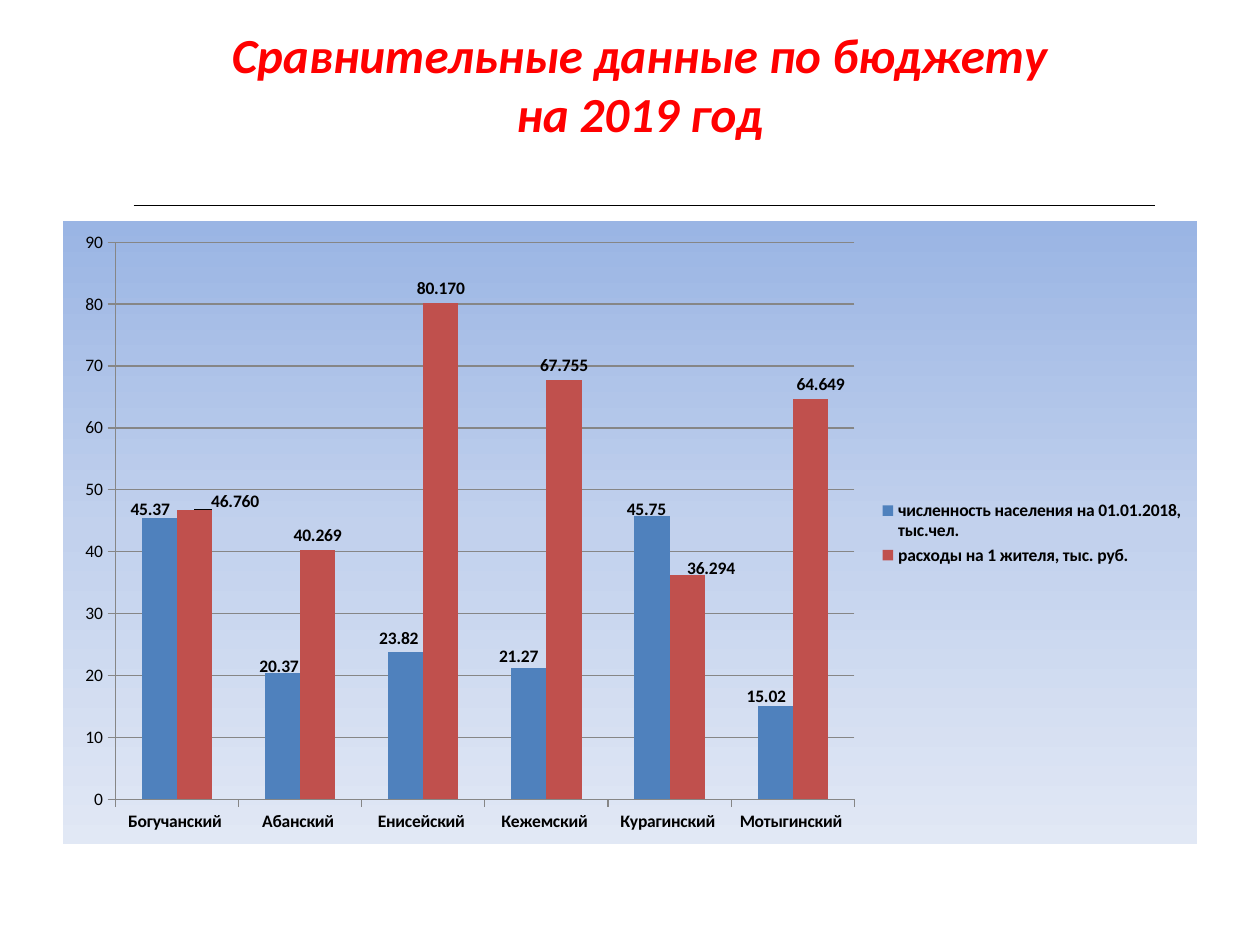
from dataclasses import dataclass

from lxml.etree import SubElement
from pptx import Presentation
from pptx.chart.data import CategoryChartData
from pptx.dml.color import RGBColor
from pptx.enum.chart import XL_CHART_TYPE, XL_LABEL_POSITION, XL_LEGEND_POSITION, XL_TICK_MARK
from pptx.enum.text import MSO_ANCHOR, PP_ALIGN
from pptx.oxml import parse_xml
from pptx.oxml.ns import nsdecls, qn
from pptx.util import Inches, Pt


@dataclass(frozen=True)
class Theme:
    font: str = "Calibri"
    title: str = "FF0000"
    text: str = "000000"
    grid: str = "868686"
    title_size: int = 28
    chart_size: int = 10
    bars: tuple = ("4F81BD", "C0504D")
    gradient: tuple = ((0, "9AB5E4"), (50, "C2D1ED"), (100, "E1E8F5"))


THEME = Theme()
TITLE = ("Сравнительные данные по бюджету", "на 2019 год")
DISTRICTS = ("Богучанский ", "Абанский ", "Енисейский ", "Кежемский ", "Курагинский ", "Мотыгинский ")
SERIES = (
    ("численность населения на 01.01.2018, тыс.чел.", "General",
     (45.37, 20.37, 23.82, 21.27, 45.75, 15.02)),
    ("расходы на 1 жителя, тыс. руб.", "0.000",
     (46.76, 40.269, 80.17, 67.755, 36.294, 64.649)),
)
LABEL_SHIFTS = (
    {0: (-0.008, 0.01), 1: (-0.003, 0.014), 2: (-0.006, 0.002),
     3: (-0.009, 0.006), 4: (-0.005, 0.014), 5: (-0.008, 0.008)},
    {0: (0.036, 0.01), 4: (0.021, 0.014), 5: (0.009, 0)},
)
LABEL_EXT_URI = "{CE6537A1-D6FC-4f65-9D91-7224C49458BB}"
LABEL_EXT_NS = "http://schemas.microsoft.com/office/drawing/2012/chart"


def style_font(font, size, color, bold=False, italic=False):
    font.name = THEME.font
    font.size = Pt(size)
    font.bold = bold
    font.italic = italic
    font.color.rgb = RGBColor.from_string(color)


def style_line(line):
    line.color.rgb = RGBColor.from_string(THEME.grid)
    line.width = Pt(0.75)


def set_borders(cell):
    tc_pr = cell._tc.get_or_add_tcPr()
    for i, side in enumerate(("lnL", "lnR", "lnT", "lnB")):
        if side == "lnB":
            fill = f'<a:solidFill><a:srgbClr val="{THEME.text}"/></a:solidFill>'
        else:
            fill = "<a:noFill/>"
        tc_pr.insert(i, parse_xml(f'<a:{side} {nsdecls("a")} w="{Pt(0.5)}">{fill}</a:{side}>'))


def add_title(slide):
    frame = slide.shapes.add_table(1, 1, Inches(1.06), Inches(0.21), Inches(8.11), Inches(1.42))
    table = frame.table
    table.first_row = table.horz_banding = False
    cell = table.cell(0, 0)
    cell.fill.background()
    cell.margin_left = cell.margin_top = cell.margin_bottom = 0
    cell.margin_right = Inches(0.08)
    cell.vertical_anchor = MSO_ANCHOR.TOP
    tf = cell.text_frame
    tf.text = "\n".join(TITLE)
    for p in tf.paragraphs:
        p.alignment = PP_ALIGN.CENTER
        for r in p.runs:
            style_font(r.font, THEME.title_size, THEME.title, bold=True, italic=True)
    set_borders(cell)


def make_layout(x, y, w=None, h=None, inner=False):
    layout = parse_xml(f'<c:layout {nsdecls("c")}><c:manualLayout/></c:layout>')
    values = {"x": x, "y": y}
    if w:
        values = {"xMode": "edge", "yMode": "edge", **values, "w": w, "h": h}
    if inner:
        values = {"layoutTarget": "inner", **values}
    for name, value in values.items():
        SubElement(layout[0], qn(f"c:{name}")).set("val", str(value))
    return layout


def fill_chart(chart):
    stops = "".join(
        f'<a:gs pos="{pos * 1000}"><a:srgbClr val="{color}"/></a:gs>'
        for pos, color in THEME.gradient)
    sp_pr = parse_xml(
        f'<c:spPr {nsdecls("c", "a")}><a:gradFill><a:gsLst>{stops}</a:gsLst>'
        '<a:lin ang="5400000" scaled="0"/></a:gradFill><a:ln><a:noFill/></a:ln></c:spPr>')
    chart.element.find(qn("c:txPr")).addprevious(sp_pr)


def label_series(chart, index, number_format):
    series = chart.plots[0].series[index]
    labels = series.data_labels
    labels.show_value = True
    labels.position = XL_LABEL_POSITION.OUTSIDE_END
    labels.number_format = number_format
    labels.number_format_is_linked = False
    style_font(labels.font, THEME.chart_size, THEME.text, bold=True)
    for point, shift in LABEL_SHIFTS[index].items():
        label = series.points[point].data_label
        style_font(label.font, THEME.chart_size, THEME.text, bold=True)
        label.position = XL_LABEL_POSITION.OUTSIDE_END
        idx = chart.element.xpath(f".//c:ser[{index + 1}]//c:dLbl/c:idx[@val='{point}']")[0]
        idx.addnext(parse_xml(
            f'<c:numFmt {nsdecls("c")} formatCode="{number_format}" sourceLinked="0"/>'))
        idx.addnext(make_layout(*shift))
    chart.element.xpath(f".//c:ser[{index + 1}]/c:dLbls")[0].append(parse_xml(
        f'<c:extLst {nsdecls("c")}><c:ext uri="{LABEL_EXT_URI}" xmlns:c15="{LABEL_EXT_NS}">'
        '<c15:showLeaderLines val="0"/></c:ext></c:extLst>'))


def style_axes(chart):
    for axis, bold in ((chart.category_axis, True), (chart.value_axis, False)):
        axis.major_tick_mark = XL_TICK_MARK.OUTSIDE
        axis.minor_tick_mark = XL_TICK_MARK.NONE
        style_font(axis.tick_labels.font, THEME.chart_size, THEME.text, bold=bold)
        style_line(axis.format.line)
    axis = chart.value_axis
    axis.minimum_scale, axis.maximum_scale, axis.major_unit = 0, 90, 10
    axis.tick_labels.number_format = "General"
    axis.tick_labels.number_format_is_linked = False
    axis.has_major_gridlines = True
    style_line(axis.major_gridlines.format.line)


def add_legend(chart):
    chart.has_legend = True
    legend = chart.legend
    legend.position = XL_LEGEND_POSITION.RIGHT
    legend.include_in_layout = False
    style_font(legend.font, THEME.chart_size, THEME.text, bold=True)
    for old in chart.element.xpath(".//c:legend/c:layout"):
        old.getparent().remove(old)
    chart.element.xpath(".//c:legend/c:legendPos")[0].addnext(make_layout(0.717, 0.441, 0.275, 0.12))


def add_budget_chart(slide):
    data = CategoryChartData()
    data.categories = DISTRICTS
    for name, _, values in SERIES:
        data.add_series(name, values)
    chart = slide.shapes.add_chart(
        XL_CHART_TYPE.COLUMN_CLUSTERED, Inches(0.5), Inches(1.75), Inches(9), Inches(4.95), data).chart
    chart.has_title = False
    style_font(chart.font, THEME.chart_size, THEME.text)
    fill_chart(chart)
    plot = chart.plots[0]
    plot.vary_by_categories = False
    plot.gap_width, plot.overlap = 150, 0
    for i, (series, color) in enumerate(zip(plot.series, THEME.bars)):
        series.format.fill.solid()
        series.format.fill.fore_color.rgb = RGBColor.from_string(color)
        label_series(chart, i, SERIES[i][1])
    style_axes(chart)
    add_legend(chart)
    area = chart.element.xpath(".//c:plotArea")[0]
    for old in area.findall(qn("c:layout")):
        area.remove(old)
    area.insert(0, make_layout(0.046, 0.035, 0.652, 0.893, inner=True))


def main():
    prs = Presentation()
    prs.slide_width, prs.slide_height = Inches(10), Inches(7.5)
    slide = prs.slides.add_slide(prs.slide_layouts[6])
    add_title(slide)
    add_budget_chart(slide)
    prs.save("out.pptx")


if __name__ == "__main__":
    main()
